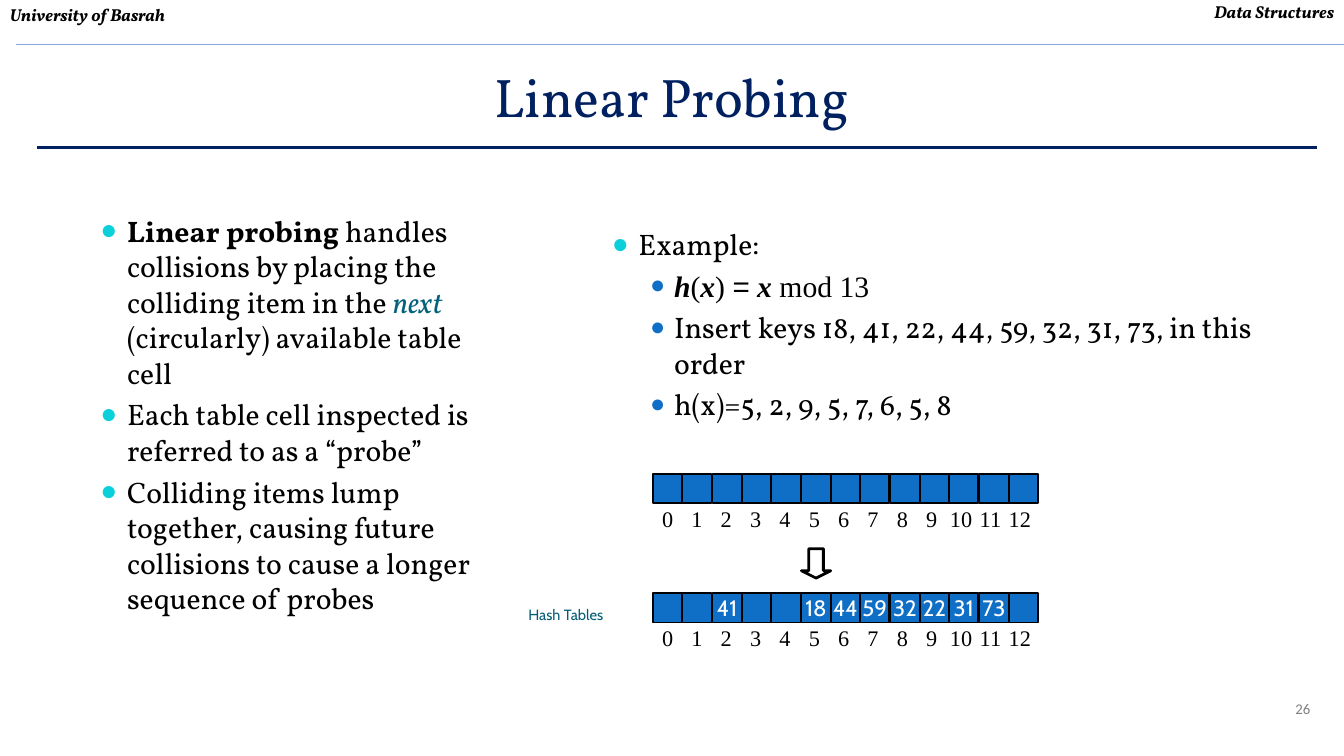
from pptx import Presentation
from pptx import util as u
from pptx.dml.color import RGBColor
from pptx.enum import shapes, text
from pptx.oxml.ns import qn
from lxml import etree

PX = 9144  # EMU, 100 px to the inch
BLACK = RGBColor(0x00, 0x00, 0x00)
WHITE = RGBColor(0xFF, 0xFF, 0xFF)
NAVY = RGBColor(0x00, 0x20, 0x60)
PALE_BLUE = RGBColor(0x8A, 0xA6, 0xDC)
BLUE = RGBColor(0x0F, 0x6F, 0xC6)
CYAN = RGBColor(0x0B, 0xD0, 0xD9)
TEAL = RGBColor(0x04, 0x61, 0x7B)
DARK_TEAL = RGBColor(0x04, 0x5D, 0x75)
GREY = RGBColor(0x80, 0x80, 0x80)
SERIF, SANS, MATH, SYMBOL = "Vollkorn", "Cabin", "Times New Roman", "Arial"
LEFT, CENTER, RIGHT = text.PP_ALIGN.LEFT, text.PP_ALIGN.CENTER, text.PP_ALIGN.RIGHT

# Bullet level: left margin px, hanging px, colour, size in percent
BULLETS = [(30, 30, CYAN, 95), (70, 27, BLUE, 85)]

PROBING_POINTS = [
    (0, [("Linear probing", dict(bold=True)),
         (" handles collisions by placing the colliding item in the ", {}),
         ("next ", dict(italic=True, color=TEAL)),
         ("(circularly) available table cell", {})]),
    (0, [("Each table cell inspected is referred to as a “probe”", {})]),
    (0, [("Colliding items lump together, causing future collisions "
          "to cause a longer sequence of probes", {})]),
]
VARIABLE = dict(font=MATH, bold=True, italic=True)
EXAMPLE_POINTS = [
    (0, [("Example:", {})]),
    (1, [("h", VARIABLE), ("(", dict(font=MATH)), ("x", VARIABLE),
         (") ", dict(font=MATH)), ("=", dict(font=SYMBOL)),
         (" x ", VARIABLE), ("mod 13", dict(font=MATH))]),
    (1, [("Insert keys 18, 41, 22, 44, 59, 32, 31, 73, in this order", {})]),
    (1, [("h(x)=5, 2, 9, 5, 7, 6, 5, 8", {})]),
]
TABLE_SIZE = 13
KEYS = [18, 41, 22, 44, 59, 32, 31, 73]


def write(paragraph, words, *, size=24, font=SERIF, color=BLACK, bold=False, italic=False):
    run = paragraph.add_run()
    run.text = words
    run.font.size = u.Pt(size)
    run.font.name = font
    run.font.color.rgb = color
    run.font.bold = bold
    run.font.italic = italic


def set_bullet(paragraph, level):
    margin, hanging, color, percent = BULLETS[level]
    properties = paragraph._p.get_or_add_pPr()
    properties.set("marL", str(margin * PX))
    properties.set("indent", str(-hanging * PX))
    bullet_color = etree.SubElement(properties, qn("a:buClr"))
    etree.SubElement(bullet_color, qn("a:srgbClr")).set("val", str(color))
    etree.SubElement(properties, qn("a:buSzPct")).set("val", str(percent * 1000))
    etree.SubElement(properties, qn("a:buFont")).set("typeface", SYMBOL)
    etree.SubElement(properties, qn("a:buChar")).set("char", "●")


def probe_linearly(keys, size):
    """Return the table cells after inserting the keys, None where empty."""
    cells = [None] * size
    for key in keys:
        slot = key % size
        while cells[slot] is not None:
            slot = (slot + 1) % size
        cells[slot] = key
    return cells


class SlideBuilder:
    def __init__(self, slide):
        self.shapes = slide.shapes

    def frame(self, left, top, width, height, anchor=text.MSO_ANCHOR.TOP, wrap=True):
        box = self.shapes.add_textbox(left * PX, top * PX, width * PX, height * PX)
        box.text_frame.word_wrap = wrap
        box.text_frame.vertical_anchor = anchor
        return box.text_frame

    def label(self, words, left, top, width, height, align=LEFT,
              anchor=text.MSO_ANCHOR.TOP, wrap=True, **style):
        frame = self.frame(left, top, width, height, anchor, wrap)
        frame.paragraphs[0].alignment = align
        write(frame.paragraphs[0], words, **style)
        return frame

    def bullets(self, points, left, top, width, height):
        frame = self.frame(left, top, width, height)
        for number, (level, runs) in enumerate(points):
            paragraph = frame.add_paragraph() if number else frame.paragraphs[0]
            paragraph.level = level
            set_bullet(paragraph, level)
            paragraph.space_before = u.Pt(4.8 if number else 0)
            for words, style in runs:
                write(paragraph, words, **style)

    def rule(self, left, right, y, color, weight):
        line = self.shapes.add_connector(
            shapes.MSO_CONNECTOR.STRAIGHT, left * PX, y * PX, right * PX, y * PX)
        line.line.color.rgb = color
        line.line.width = u.Pt(weight)
        etree.SubElement(line._element.spPr, qn("a:effectLst"))

    def shape(self, kind, left, top, width, height, fill=None, weight=1.5):
        shape = self.shapes.add_shape(kind, left * PX, top * PX, width * PX, height * PX)
        shape.shadow.inherit = False
        if fill is None:
            shape.fill.background()
        else:
            shape.fill.solid()
            shape.fill.fore_color.rgb = fill
        shape.line.color.rgb = BLACK
        shape.line.width = u.Pt(weight)
        return shape

    def hash_table(self, cells, left, top):
        for index, key in enumerate(cells):
            cell = self.shape(shapes.MSO_SHAPE.RECTANGLE, left + round(index * 100 / 3),
                              top, 33, 33, BLUE)
            if key is not None:
                cell.text_frame.word_wrap = False
                cell.text_frame.vertical_anchor = text.MSO_ANCHOR.MIDDLE
                paragraph = cell.text_frame.paragraphs[0]
                paragraph.alignment = CENTER
                write(paragraph, str(key), size=18, font=SANS, color=WHITE)
            index_label = self.label(str(index), left + 33 * index - 6, top + 30, 45, 40,
                                     CENTER, wrap=False, size=18, font=MATH)
            index_label.margin_left = index_label.margin_right = 0


def main():
    presentation = Presentation()
    presentation.slide_width = 1511 * PX
    presentation.slide_height = 850 * PX
    builder = SlideBuilder(presentation.slides.add_slide(presentation.slide_layouts[6]))

    header = dict(size=14, bold=True, italic=True)
    builder.label("26", 1316, 782, 167, 70, RIGHT, size=12, font="Calibri", color=GREY)
    builder.label("Data Structures", 0, -3, 1510, 34, RIGHT, **header)
    builder.rule(18, 1511, 50, PALE_BLUE, 1.5)
    builder.rule(42, 1481, 166, NAVY, 2)
    builder.label("University of Basrah", 1, 0, 785, 34, **header)
    builder.label("Linear Probing", 0, 50, 1511, 115, CENTER,
                  text.MSO_ANCHOR.MIDDLE, size=44, color=NAVY)

    builder.bullets(PROBING_POINTS, 103, 234, 450, 500)
    builder.bullets(EXAMPLE_POINTS, 678, 249, 810, 242)

    footer = builder.label("Hash Tables", 594, 661, 367, 40, anchor=text.MSO_ANCHOR.BOTTOM,
                           size=12, font=SANS, color=DARK_TEAL)
    footer.margin_left = footer.margin_top = footer.margin_right = footer.margin_bottom = 0

    builder.hash_table([None] * TABLE_SIZE, 734, 533)
    builder.hash_table(probe_linearly(KEYS, TABLE_SIZE), 734, 667)
    arrow = builder.shape(shapes.MSO_SHAPE.DOWN_ARROW, 901, 617, 33, 33, weight=2.25)
    arrow.adjustments[0] = 0.5
    arrow.adjustments[1] = 0.25

    presentation.save("out.pptx")


if __name__ == "__main__":
    main()
